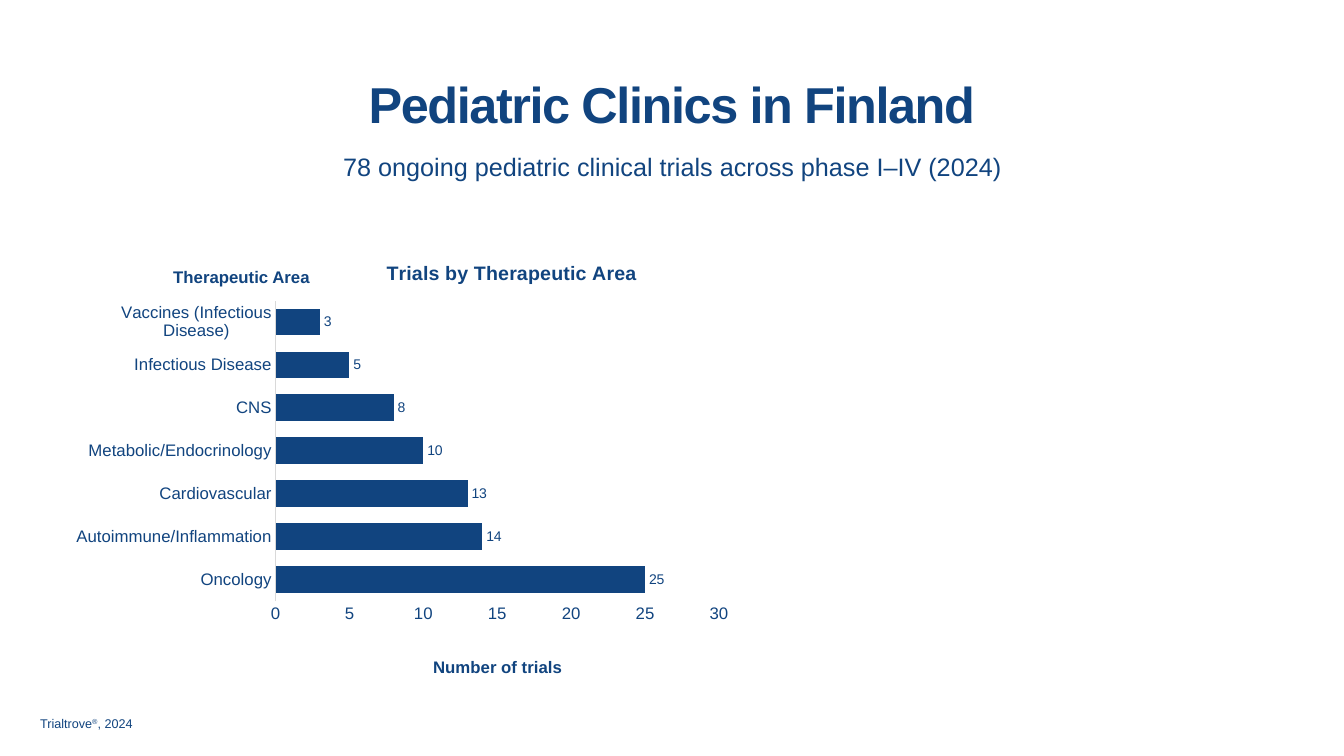
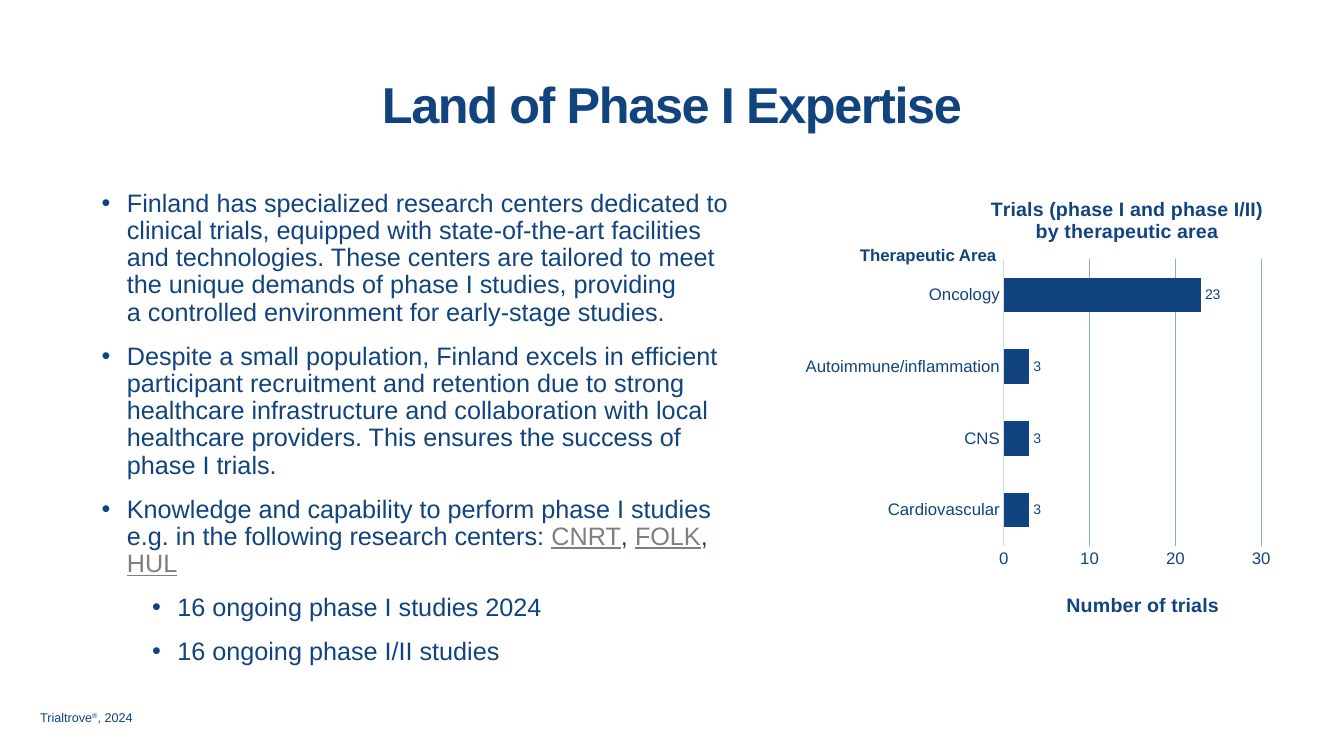
from lxml import etree
from pptx import Presentation
from pptx.chart.data import CategoryChartData
from pptx.dml.color import RGBColor
from pptx.enum.chart import XL_CHART_TYPE as ChartType
from pptx.enum.chart import XL_LABEL_POSITION as LabelPosition
from pptx.enum.chart import XL_TICK_MARK as TickMark
from pptx.enum.text import MSO_ANCHOR as Anchor
from pptx.enum.text import PP_ALIGN as Align
from pptx.oxml.ns import qn
from pptx.util import Inches, Pt

NAVY = RGBColor(0x11, 0x44, 0x7F)
GRAY = RGBColor(0x7F, 0x7F, 0x7F)
AXIS_GRAY = RGBColor(0xD9, 0xD9, 0xD9)
GRID_BLUE = RGBColor(0x86, 0xB1, 0xC9)
FONT = "Arial"
BULLET_INDENT = Inches(0.25)
LEVEL_INDENT = Inches(0.5)


def style_font(font, size, bold=False, color=NAVY):
    font.name = FONT
    font.size = Pt(size)
    font.bold = bold
    font.color.rgb = color


def set_layout(parent, index, target=None, **shares):
    """Fix a chart part's place, in shares of the chart's size."""
    for old in parent.findall(qn("c:layout")):
        parent.remove(old)
    layout = etree.Element(qn("c:layout"))
    manual = etree.SubElement(layout, qn("c:manualLayout"))
    settings = {"layoutTarget": target} if target else {}
    settings.update(xMode="edge", yMode="edge", **shares)
    for name, value in settings.items():
        etree.SubElement(manual, qn(f"c:{name}")).set("val", str(value))
    parent.insert(index, layout)


class Builder:
    """Holds the deck, its style and the slide being filled.

    Areas are (left, top, width, height) in percent of the slide's size.
    """

    def __init__(self):
        self.deck = Presentation()
        self.deck.slide_width = Inches(13.33)
        self.deck.slide_height = Inches(7.5)
        self.slide = None

    def new_slide(self, title):
        self.slide = self.deck.slides.add_slide(self.deck.slide_layouts[6])
        frame = self.frame((6.9, 0, 86.2, 18.4), Anchor.BOTTOM)
        para = self.para(frame, Align.CENTER)
        self.span(para, title, 36, bold=True, spacing=-1)

    def place(self, area):
        sizes = (self.deck.slide_width, self.deck.slide_height) * 2
        return [round(size * share / 100) for size, share in zip(sizes, area)]

    def frame(self, area, anchor=Anchor.TOP):
        box = self.slide.shapes.add_textbox(*self.place(area))
        box.text_frame.word_wrap = True
        box.text_frame.vertical_anchor = anchor
        return box.text_frame

    def para(self, frame, align=Align.LEFT, first=True, line_spacing=0.9):
        para = frame.paragraphs[0] if first else frame.add_paragraph()
        para.alignment = align
        para.line_spacing = line_spacing
        return para

    def span(self, para, text, size, bold=False, color=NAVY,
             underline=False, spacing=0, raised=0):
        """Add one run; spacing is in points, raised in percent."""
        span = para.add_run()
        span.text = text
        style_font(span.font, size, bold, color)
        if underline:
            span.font.underline = True
        for name, value in (("spc", spacing * 100), ("baseline", raised * 1000)):
            if value:
                span.font._element.set(name, str(value))

    def subtitle(self, text):
        frame = self.frame((19.88, 19.87, 60.3, 4.93))
        self.span(self.para(frame, Align.CENTER), text, 18)

    def bullets(self, area, items):
        """Items are (level, lines); a line is a list of (text, is_link)."""
        frame = self.frame(area)
        for index, (level, lines) in enumerate(items):
            para = self.para(frame, first=index == 0)
            para.level = level
            para.space_before = Pt(6 if index else 0)
            para.space_after = Pt(6)
            props = para._p.get_or_add_pPr()
            props.set("marL", str(BULLET_INDENT + level * LEVEL_INDENT))
            props.set("indent", str(-BULLET_INDENT))
            etree.SubElement(props, qn("a:buFont")).set("typeface", FONT)
            etree.SubElement(props, qn("a:buChar")).set("char", "•")
            for number, line in enumerate(lines):
                if number:
                    para.add_line_break()
                for text, is_link in line:
                    self.span(para, text, 18, underline=is_link,
                              color=GRAY if is_link else NAVY)

    def axis_label(self, area, text):
        para = self.para(self.frame(area), line_spacing=1.0)
        self.span(para, text, 12, bold=True)

    def source(self, top):
        para = self.para(self.frame((2.25, top, 95.5, 3.73)))
        self.span(para, "Trialtrove", 9)
        self.span(para, "®", 9, raised=30)
        self.span(para, ", 2024", 9)

    def chart_title(self, title, lines, size, left, top):
        for index, line in enumerate(lines):
            para = self.para(title.text_frame, Align.CENTER, index == 0, 1.0)
            self.span(para, line, size, bold=True)
        set_layout(title._element, 1, x=left, y=top)

    def bar_chart(self, area, values, gap, step, plot_area, title, title_at,
                  axis_title_size, axis_title_at, grid=None):
        data = CategoryChartData()
        data.categories = list(values)
        data.add_series("Series 1", list(values.values()))
        chart = self.slide.shapes.add_chart(
            ChartType.BAR_CLUSTERED, *self.place(area), data).chart
        style_font(chart.font, 12)
        chart.has_legend = False
        chart.has_title = True
        self.chart_title(chart.chart_title, title, 14, *title_at)

        plot = chart.plots[0]
        plot.vary_by_categories = False
        plot.gap_width = gap
        plot.has_data_labels = True
        labels = plot.data_labels
        labels.show_value = True
        labels.position = LabelPosition.OUTSIDE_END
        style_font(labels.font, 10)
        fill = plot.series[0].format.fill
        fill.solid()
        fill.fore_color.rgb = NAVY

        for axis in (chart.category_axis, chart.value_axis):
            axis.major_tick_mark = axis.minor_tick_mark = TickMark.NONE
            axis.has_major_gridlines = False
            style_font(axis.tick_labels.font, 12)
        line = chart.category_axis.format.line
        line.color.rgb = AXIS_GRAY
        line.width = Pt(0.75)

        scale = chart.value_axis
        scale.minimum_scale, scale.maximum_scale = 0, 30
        scale.major_unit = step
        scale.format.line.fill.background()
        if grid:
            scale.has_major_gridlines = True
            scale.major_gridlines.format.line.color.rgb = grid
            scale.major_gridlines.format.line.width = Pt(0.75)
        scale.has_title = True
        self.chart_title(scale.axis_title, ["Number of trials"],
                         axis_title_size, *axis_title_at)
        plot_element = chart._chartSpace.find(".//" + qn("c:plotArea"))
        set_layout(plot_element, 0, "inner", **dict(zip("xywh", plot_area)))


def clinics_slide(build):
    build.new_slide("Pediatric Clinics in Finland")
    build.subtitle("78 ongoing pediatric clinical trials across phase I–IV (2024)")
    trials = {
        "Oncology": 25,
        "Autoimmune/Inflammation": 14,
        "Cardiovascular": 13,
        "Metabolic/Endocrinology": 10,
        "CNS": 8,
        "Infectious Disease": 5,
        "Vaccines (Infectious Disease)": 3,
    }
    build.bar_chart((5, 32.27, 50, 57.87), trials, gap=60, step=5,
                    plot_area=(0.31, 0.13, 0.66, 0.69),
                    title=["Trials by Therapeutic Area"], title_at=(0.47, 0.03),
                    axis_title_size=12, axis_title_at=(0.54, 0.94))
    build.source(94.27)
    build.axis_label((12.15, 34.67, 12.45, 4), "Therapeutic Area")


def expertise_slide(build):
    build.new_slide("Land of Phase I Expertise")
    build.bullets((6.83, 24.53, 49.66, 68.27), [
        (0, [[("Finland has specialized research centers dedicated to clinical "
               "trials, equipped with state-of-the-art facilities and "
               "technologies. These centers are tailored to meet the unique "
               "demands of phase I studies, providing", False)],
             [("a controlled environment for early-stage studies.", False)]]),
        (0, [[("Despite a small population, Finland excels in efficient "
               "participant recruitment and retention due to strong healthcare "
               "infrastructure and collaboration with local healthcare "
               "providers. This ensures the success of phase I trials.", False)]]),
        (0, [[("Knowledge and capability to perform phase I studies e.g. in the "
               "following research centers: ", False),
              ("CNRT", True), (", ", False), ("FOLK", True), (", ", False),
              ("HUL", True)]]),
        (1, [[("16 ongoing phase I studies 2024", False)]]),
        (1, [[("16 ongoing phase I/II studies", False)]]),
    ])
    trials = {"Cardiovascular": 3, "CNS": 3, "Autoimmune/inflammation": 3,
              "Oncology": 23}
    build.bar_chart((55.14, 24.53, 39.9, 57.87), trials, gap=108, step=10,
                    plot_area=(0.49, 0.17, 0.48, 0.66),
                    title=["Trials (phase I and phase I/II)",
                           "by therapeutic area"], title_at=(0.46, 0.02),
                    axis_title_size=14, axis_title_at=(0.6, 0.93),
                    grid=GRID_BLUE)
    build.axis_label((63.24, 31.73, 12.08, 4), "Therapeutic Area")
    build.source(93.47)


def main():
    build = Builder()
    clinics_slide(build)
    expertise_slide(build)
    build.deck.save("out.pptx")


if __name__ == "__main__":
    main()
